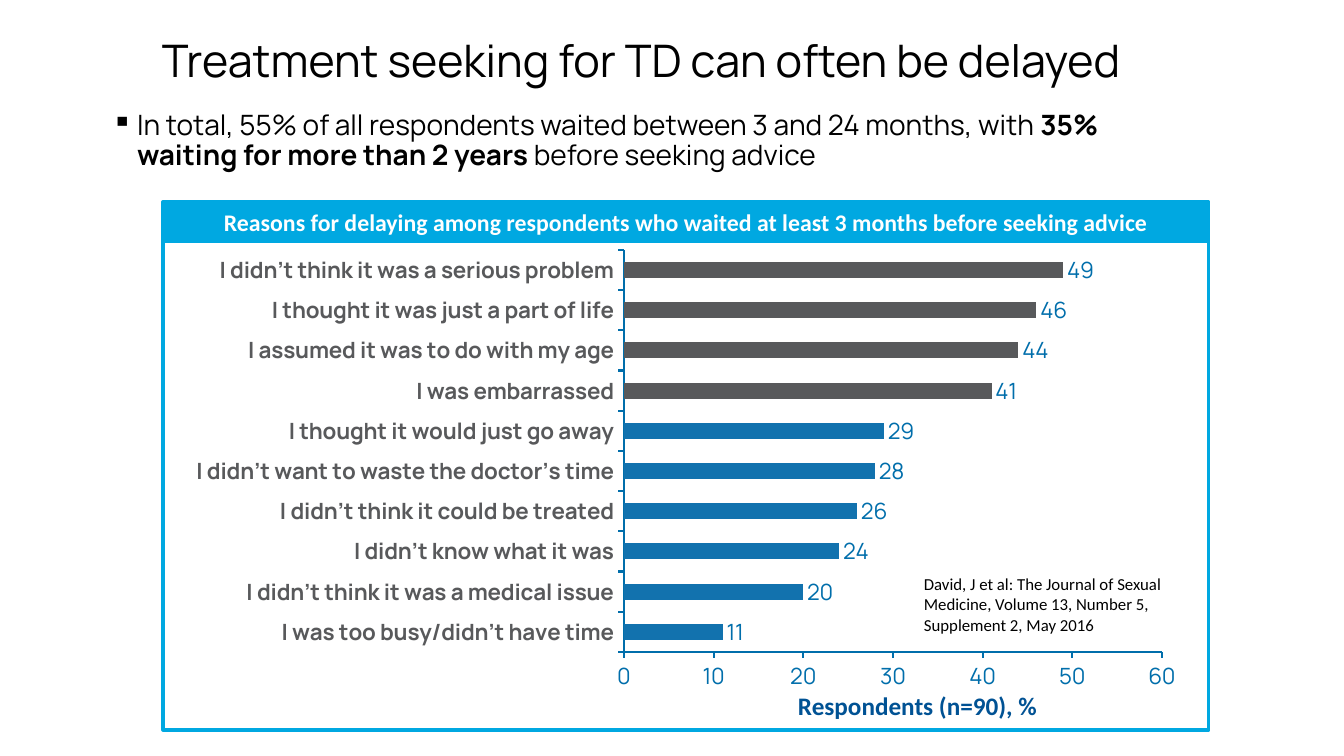
import pptx
import pptx.chart.data
import pptx.dml.color
import pptx.enum.chart
import pptx.enum.shapes
import pptx.enum.text
import pptx.oxml
import pptx.oxml.ns
import pptx.util

RGBColor = pptx.dml.color.RGBColor
BLACK = RGBColor(0x00, 0x00, 0x00)
WHITE = RGBColor(0xFF, 0xFF, 0xFF)
SKY = RGBColor(0x00, 0xA8, 0xE1)
AXIS_BLUE = RGBColor(0x00, 0x6E, 0xAB)
BAR_BLUE = RGBColor(0x12, 0x72, 0xAE)
NAVY = RGBColor(0x00, 0x52, 0x94)
GREY = RGBColor(0x58, 0x59, 0x5B)

ALIGN = pptx.enum.text.PP_ALIGN
ANCHOR = pptx.enum.text.MSO_ANCHOR
EMU_PER_PX = 914400 / 100.8

REASONS = [
    ("I was too busy/didn't have time", 11),
    ("I didn't think it was a medical issue", 20),
    ("I didn't know what it was", 24),
    ("I didn't think it could be treated", 26),
    ("I didn't want to waste the doctor's time", 28),
    ("I thought it would just go away", 29),
    ("I was embarrassed", 41),
    ("I assumed it was to do with my age", 44),
    ("I thought it was just a part of life", 46),
    ("I didn't think it was a serious problem", 49),
]
HIGHLIGHT_FROM = 40


def emu(px):
    return pptx.util.Emu(round(px * EMU_PER_PX))


class SlideBuilder:
    heading_font = "Manrope"
    label_font = "Calibri"

    def __init__(self, presentation):
        self.slide = presentation.slides.add_slide(presentation.slide_layouts[5])

    def set_font(self, font, name, size, color, bold=False):
        font.name = name
        font.size = pptx.util.Pt(size)
        font.color.rgb = color
        font.bold = bold

    def fill_text(self, shape, runs, name, size, color, align=ALIGN.LEFT,
                  anchor=ANCHOR.TOP, wrap=True, spacing=None, bullet=None):
        """Fill a shape with one paragraph of (text, bold) runs."""
        frame = shape.text_frame
        frame.word_wrap = wrap
        frame.auto_size = pptx.enum.text.MSO_AUTO_SIZE.NONE
        frame.vertical_anchor = anchor
        paragraph = frame.paragraphs[0]
        paragraph.alignment = align
        paragraph.space_before = pptx.util.Pt(0)
        if spacing:
            paragraph.line_spacing = spacing
        if bullet:
            properties = paragraph._p.get_or_add_pPr()
            indent = pptx.util.Inches(0.25)
            properties.set("marL", str(indent))
            properties.set("indent", str(-indent))
            mark = pptx.oxml.parse_xml(
                f'<a:buChar {pptx.oxml.ns.nsdecls("a")} char="{bullet}"/>')
            properties.append(mark)
        for text, bold in runs:
            run = paragraph.add_run()
            run.text = text
            self.set_font(run.font, name, size, color, bold)

    def title(self, box, text):
        shape = self.slide.shapes.title
        shape.left, shape.top, shape.width, shape.height = map(emu, box)
        self.fill_text(shape, [(text, False)], self.heading_font, 32, BLACK,
                       ALIGN.CENTER, ANCHOR.MIDDLE, spacing=0.9)

    def text(self, box, runs, name, size, color, **layout):
        shape = self.slide.shapes.add_textbox(*map(emu, box))
        self.fill_text(shape, runs, name, size, color, **layout)

    def rectangle(self, box, fill):
        shape = self.slide.shapes.add_shape(
            pptx.enum.shapes.MSO_SHAPE.RECTANGLE, *map(emu, box))
        shape.shadow.inherit = False
        shape.fill.solid()
        shape.fill.fore_color.rgb = fill
        shape.line.color.rgb = SKY
        shape.line.width = pptx.util.Pt(2.25)
        return shape

    def bar_chart(self, box, plot, reasons):
        """Add a bar chart whose axes enclose the slide area given by plot."""
        data = pptx.chart.data.CategoryChartData()
        data.categories = [reason for reason, _ in reasons]
        data.add_series("Series 1", [value for _, value in reasons])
        chart = self.slide.shapes.add_chart(
            pptx.enum.chart.XL_CHART_TYPE.BAR_CLUSTERED,
            *map(emu, box), data).chart
        chart.has_legend = False
        chart.has_title = False
        self.set_font(chart.font, self.heading_font, 18, AXIS_BLUE)
        self.place_plot(chart, box, plot)

        for axis, color, bold in ((chart.category_axis, GREY, True),
                                  (chart.value_axis, AXIS_BLUE, False)):
            axis.has_major_gridlines = False
            axis.major_tick_mark = pptx.enum.chart.XL_TICK_MARK.OUTSIDE
            axis.minor_tick_mark = pptx.enum.chart.XL_TICK_MARK.NONE
            axis.format.line.color.rgb = AXIS_BLUE
            axis.format.line.width = pptx.util.Pt(1.5)
            self.set_font(axis.tick_labels.font, self.heading_font, 16, color, bold)
        chart.value_axis.minimum_scale = 0
        chart.value_axis.maximum_scale = 60
        chart.value_axis.major_unit = 10

        bars = chart.plots[0]
        bars.gap_width = 150
        bars.vary_by_categories = False
        series = bars.series[0]
        series.format.fill.solid()
        series.format.fill.fore_color.rgb = BAR_BLUE
        for index, (_, value) in enumerate(reasons):
            if value > HIGHLIGHT_FROM:
                fill = series.points[index].format.fill
                fill.solid()
                fill.fore_color.rgb = GREY
        labels = series.data_labels
        labels.show_value = True
        labels.position = pptx.enum.chart.XL_LABEL_POSITION.OUTSIDE_END
        self.set_font(labels.font, self.heading_font, 16, AXIS_BLUE)

    def place_plot(self, chart, box, plot):
        left, top, width, height = box
        fractions = {"x": (plot[0] - left) / width, "y": (plot[1] - top) / height,
                     "w": plot[2] / width, "h": plot[3] / height}
        modes = '<c:xMode val="edge"/><c:yMode val="edge"/>'
        values = "".join(f'<c:{key} val="{value:.4f}"/>'
                         for key, value in fractions.items())
        layout = pptx.oxml.parse_xml(
            f'<c:layout {pptx.oxml.ns.nsdecls("c")}><c:manualLayout>'
            f'<c:layoutTarget val="inner"/>{modes}{values}'
            '</c:manualLayout></c:layout>')
        plot_area = chart._chartSpace.chart.plotArea
        for old_layout in plot_area.findall(pptx.oxml.ns.qn("c:layout")):
            plot_area.remove(old_layout)
        plot_area.insert(0, layout)


def main():
    presentation = pptx.Presentation()
    presentation.slide_width = emu(1344)
    presentation.slide_height = emu(756)
    builder = SlideBuilder(presentation)

    builder.title((35, 17, 1213, 92), "Treatment seeking for TD can often be delayed")
    builder.rectangle((163, 220, 1046, 510), WHITE)
    builder.bar_chart((176, 241, 1020, 460), (624, 250, 538, 402), REASONS)
    builder.text((777, 685, 281, 40), [("Respondents (n=90), %", True)],
                 builder.label_font, 18, NAVY, align=ALIGN.CENTER, wrap=False)
    header = builder.rectangle((163, 202, 1046, 39), SKY)
    builder.fill_text(
        header,
        [("Reasons for delaying among respondents who waited at least 3 months "
          "before seeking advice", True)],
        builder.label_font, 17, WHITE, ALIGN.CENTER, ANCHOR.MIDDLE)
    builder.text(
        (102, 106, 1079, 100),
        [("In total, 55% of all respondents waited between 3 and 24 months, with ", False),
         ("35% waiting for more than 2 years ", True),
         ("before seeking advice", False)],
        builder.heading_font, 20, BLACK, spacing=0.9, bullet="▪")
    builder.text(
        (914, 569, 266, 72),
        [("David, J et al: The Journal of Sexual Medicine, Volume 13, Number 5, "
          "Supplement 2, May 2016", False)],
        builder.label_font, 12, BLACK)
    presentation.save("out.pptx")


if __name__ == "__main__":
    main()
